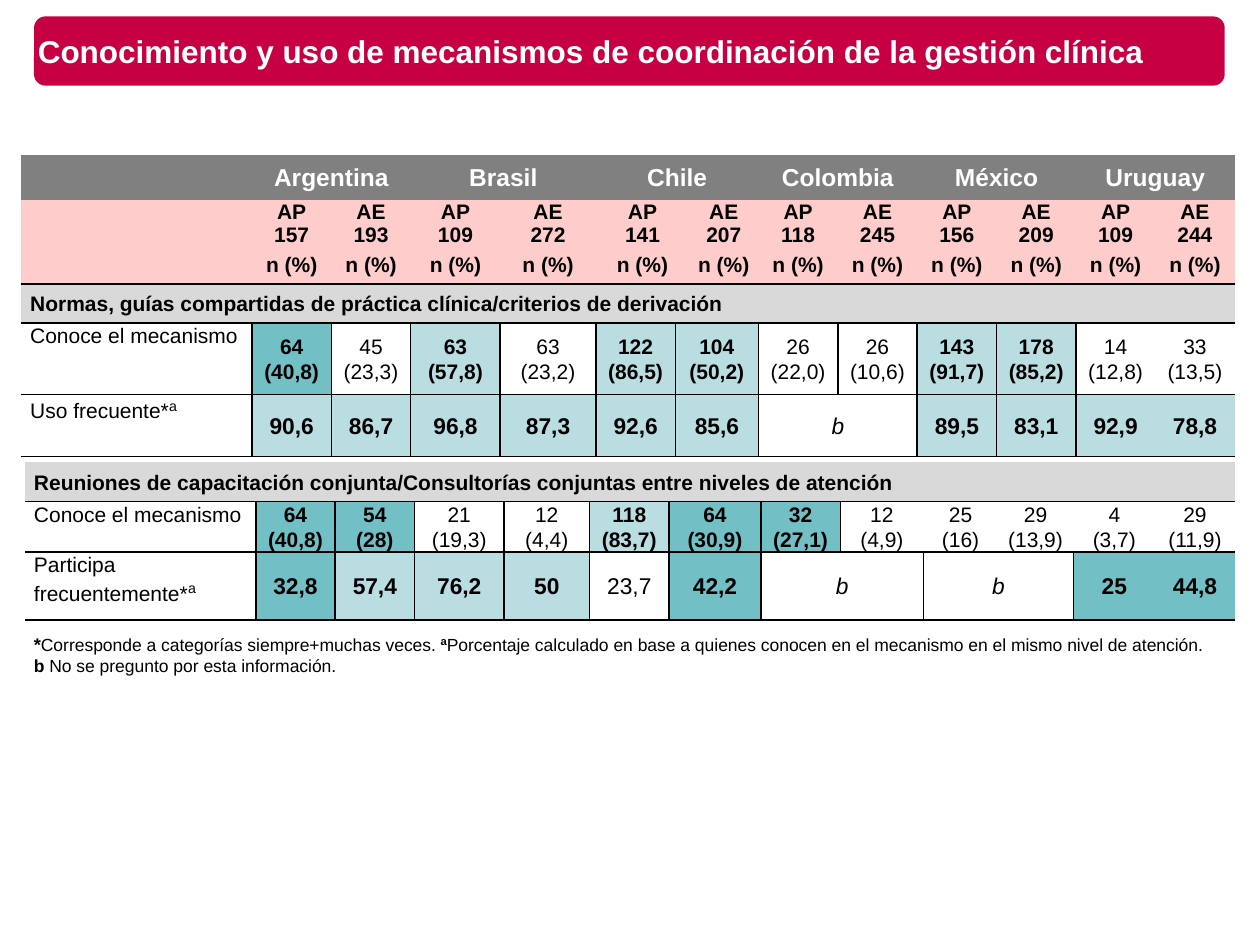
from lxml import etree
from pptx import Presentation
from pptx.dml.color import RGBColor
from pptx.enum.shapes import MSO_SHAPE
from pptx.enum.text import MSO_ANCHOR, PP_ALIGN
from pptx.oxml.ns import qn
from pptx.util import Inches, Pt

ROUND = MSO_SHAPE.ROUNDED_RECTANGLE
TOP, MID = MSO_ANCHOR.TOP, MSO_ANCHOR.MIDDLE
LEFT, CENTER = PP_ALIGN.LEFT, PP_ALIGN.CENTER

WHITE = RGBColor(0xFF, 0xFF, 0xFF)
BLACK = RGBColor(0, 0, 0)
RED = RGBColor(0xC7, 0x00, 0x44)
GRAY = RGBColor(0x80, 0x80, 0x80)
SILVER = RGBColor(0xD9, 0xD9, 0xD9)
PINK = RGBColor(0xFF, 0xCC, 0xCC)
DARK = RGBColor(0x72, 0xBF, 0xC5)
LIGHT = RGBColor(0xBA, 0xDD, 0xE1)
TONES = {"D": DARK, "L": LIGHT, "W": WHITE}

PLAIN = "{2D5ABB26-0587-4C30-8999-92F81FD0307C}"  # table style without grid


class Deck:
    font = "Arial"

    def __init__(self):
        self.prs = Presentation()
        self.prs.slide_width, self.prs.slide_height = Inches(10), Inches(7.5)
        self.slide = self.prs.slides.add_slide(self.prs.slide_layouts[5])

    def run(self, para, text, size, color=BLACK, bold=False, italic=False, sup=False):
        run = para.add_run()
        run.text = text
        font = run.font
        font.name, font.size, font.bold, font.italic = self.font, Pt(size), bold, italic
        font.color.rgb = color
        if sup:
            font._element.set("baseline", "30000")

    def banner(self, x, y, w, h):
        shape = self.slide.shapes.add_shape(ROUND, Inches(x), Inches(y), Inches(w), Inches(h))
        shape.shadow.inherit = False
        shape.fill.solid()
        shape.fill.fore_color.rgb = RED
        shape.line.fill.background()

    def title(self, text, x, y, w, h):
        title = self.slide.shapes.title
        title.left, title.top, title.width, title.height = map(Inches, (x, y, w, h))
        self.slide.shapes._spTree.append(title._element)  # in front of the banner
        frame = title.text_frame
        frame.word_wrap, frame.vertical_anchor = True, MID
        frame.paragraphs[0].alignment = LEFT
        self.run(frame.paragraphs[0], text, 18, WHITE, True)

    def note(self, lines, x, y, w, h):
        box = self.slide.shapes.add_textbox(Inches(x), Inches(y), Inches(w), Inches(h))
        frame = box.text_frame
        frame.word_wrap, frame.vertical_anchor = True, MID
        for i, runs in enumerate(lines):
            para = frame.add_paragraph() if i else frame.paragraphs[0]
            for text, size, bold, sup in runs:
                self.run(para, text, size, bold=bold, sup=sup)

    def table(self, x, y, cols, rows):
        frame = self.slide.shapes.add_table(
            len(rows), len(cols), Inches(x), Inches(y), Inches(sum(cols)), Inches(sum(rows)))
        table = frame.table
        table.first_row = table.horz_banding = False
        table._tbl.tblPr[0].text = PLAIN
        for col, width in zip(table.columns, cols):
            col.width = Inches(width)
        for row, height in zip(table.rows, rows):
            row.height = Inches(height)
        return table

    def edges(self, cell, sides):
        props = cell._tc.get_or_add_tcPr()
        for side in "LRTB":
            if side in sides:
                line = etree.SubElement(props, qn("a:ln" + side), w="12700")
                fill = etree.SubElement(line, qn("a:solidFill"))
                etree.SubElement(fill, qn("a:srgbClr"), val=str(BLACK))

    def paint(self, cell, color):
        if color is None:
            cell.fill.background()
        else:
            cell.fill.solid()
            cell.fill.fore_color.rgb = color

    def label(self, cell, text, size, color, bold, align, anchor, pad, space):
        cell.vertical_anchor = anchor
        cell.margin_left = cell.margin_right = Inches(pad)
        cell.margin_top = cell.margin_bottom = 0
        for i, line in enumerate(text.split("\n")):
            frame = cell.text_frame
            para = frame.add_paragraph() if i else frame.paragraphs[0]
            para.alignment, para.line_spacing = align, space
            main, _, mark = line.partition("^")
            if main:
                self.run(para, main, size, color, bold, italic=main == "b")
            if mark:
                self.run(para, mark, 14, color, sup=True)

    def row(self, table, r, texts, fills, size=12, color=BLACK, bolds=None, spans=None,
            seams=(), sides="", named=False, pad=0.07, space=1.07):
        """Fill a row; spans maps a column to its width, seams are columns with a line at left."""
        spans, count = spans or {}, len(table.columns)
        for c in range(count):
            cell = table.cell(r, c)
            cell.text_frame.paragraphs[0]._p.get_or_add_endParaRPr().set("sz", "1200")
            self.edges(cell, sides + "L" * (c in seams) + "R" * (c + 1 in seams))
        c = 0
        for i, (text, fill) in enumerate(zip(texts, fills)):
            cell, span = table.cell(r, c), spans.get(c, 1)
            for k in range(c, c + span):
                self.paint(table.cell(r, k), fill)
            if span > 1:
                cell.merge(table.cell(r, c + span - 1))
            side = named and i == 0
            self.label(cell, text, 12 if side else size, color, bolds[i] if bolds else True,
                       LEFT if side else CENTER,
                       TOP if side and fill is None else MID, pad, space)
            c += span

    def head(self, table, r, texts, fill, **style):
        self.row(table, r, texts, [fill] * len(texts), pad=0.01, space=1, **style)

    def band(self, table, r, text, span, sides):
        texts = [text] + [""] * (len(table.columns) - span)
        self.row(table, r, texts, [SILVER] * len(texts), spans={0: span},
                 sides=sides, named=True)

    def data(self, table, r, name, values, tones, **style):
        self.row(table, r, [name] + values.split("|"), [None] + [TONES[t] for t in tones],
                 bolds=[False] + [t != "W" for t in tones], sides="TB", named=True, **style)


def main():
    deck = Deck()

    # Title over its banner
    deck.banner(0.27, 0.13, 9.45, 0.55)
    deck.title("Conocimiento y uso de mecanismos de coordinación de la gestión clínica",
               0.2, 0.13, 9.88, 0.55)

    # Table of shared guidelines, with the country heads
    guide = deck.table(0.17, 1.23,
                       [1.83, 0.63, 0.63, 0.71, 0.76, 0.63, 0.11, 0.55] + [0.63] * 6,
                       [0.36, 0.34, 0.29, 0.31, 0.57, 0.49])
    lands = ["Argentina", "Brasil", "Chile", "Colombia", "México", "Uruguay"]
    sizes = [157, 193, 109, 272, 141, 207, 118, 245, 156, 209, 109, 244]
    groups = [f"{('AP', 'AE')[i % 2]}\n{n}" for i, n in enumerate(sizes)]
    seams = (1, 3, 5, 8, 10, 12)
    deck.head(guide, 0, [""] + lands, GRAY, size=14, color=WHITE,
              spans={c: 3 if c == 5 else 2 for c in seams})
    deck.head(guide, 1, [""] + groups, PINK, spans={5: 2})
    deck.head(guide, 2, [""] + ["n (%)"] * len(sizes), PINK, spans={5: 2}, sides="B")
    deck.band(guide, 3, "Normas, guías compartidas de práctica clínica/criterios de derivación",
              14, "TB")
    deck.data(guide, 4, "Conoce el mecanismo",
              "64 (40,8)|45 (23,3)|63 (57,8)|63 (23,2)|122 (86,5)|104 (50,2)|26 (22,0)|"
              "26 (10,6)|143 (91,7)|178 (85,2)|14 (12,8)|33 (13,5)",
              "DWLWLLWWLLWW", spans={6: 2}, seams=seams)
    deck.data(guide, 5, "Uso frecuente*^a",
              "90,6|86,7|96,8|87,3|92,6|85,6|b|89,5|83,1|92,9|78,8",
              "LLLLLLWLLLL", size=13, spans={6: 2, 8: 2}, seams=seams)

    # Table of joint meetings
    meet = deck.table(0.2, 3.67,
                      [1.83, 0.63, 0.63, 0.71, 0.68, 0.63, 0.73, 0.63, 0.66, 0.59, 0.6, 0.65, 0.63],
                      [0.31, 0.31, 0.54])
    deck.band(meet, 0, "Reuniones de capacitación conjunta/Consultorías conjuntas "
              "entre niveles de atención", 11, "B")
    deck.data(meet, 1, "Conoce el mecanismo",
              "64 (40,8)|54 (28)|21 (19,3)|12\n(4,4)|118 (83,7)|64 (30,9)|32 (27,1)|"
              "12 (4,9)|25 (16)|29 (13,9)|4\n(3,7)|29 (11,9)",
              "DDWWLDDWWWWW", seams=(1, 3, 5, 7))
    deck.data(meet, 2, "Participa frecuentemente*^a",
              "32,8|57,4|76,2|50|23,7|42,2|b|b|25|44,8",
              "DLLLWDWWDD", size=13, spans={7: 2, 9: 2}, seams=(1, 3, 5, 7, 9, 11))

    # Footnotes
    deck.note([
        [("*", 10.5, True, False),
         ("Corresponde a categorías siempre+muchas veces. ", 10, False, False),
         ("a", 11, True, True),
         ("Porcentaje calculado en base a quienes conocen en el mecanismo "
          "en el mismo nivel de atención.", 10, False, False)],
        [("b", 10, True, False),
         (" No se pregunto por esta información.", 10, False, False)],
    ], 0.17, 5.01, 9.52, 0.36)

    deck.prs.save("out.pptx")


if __name__ == "__main__":
    main()
